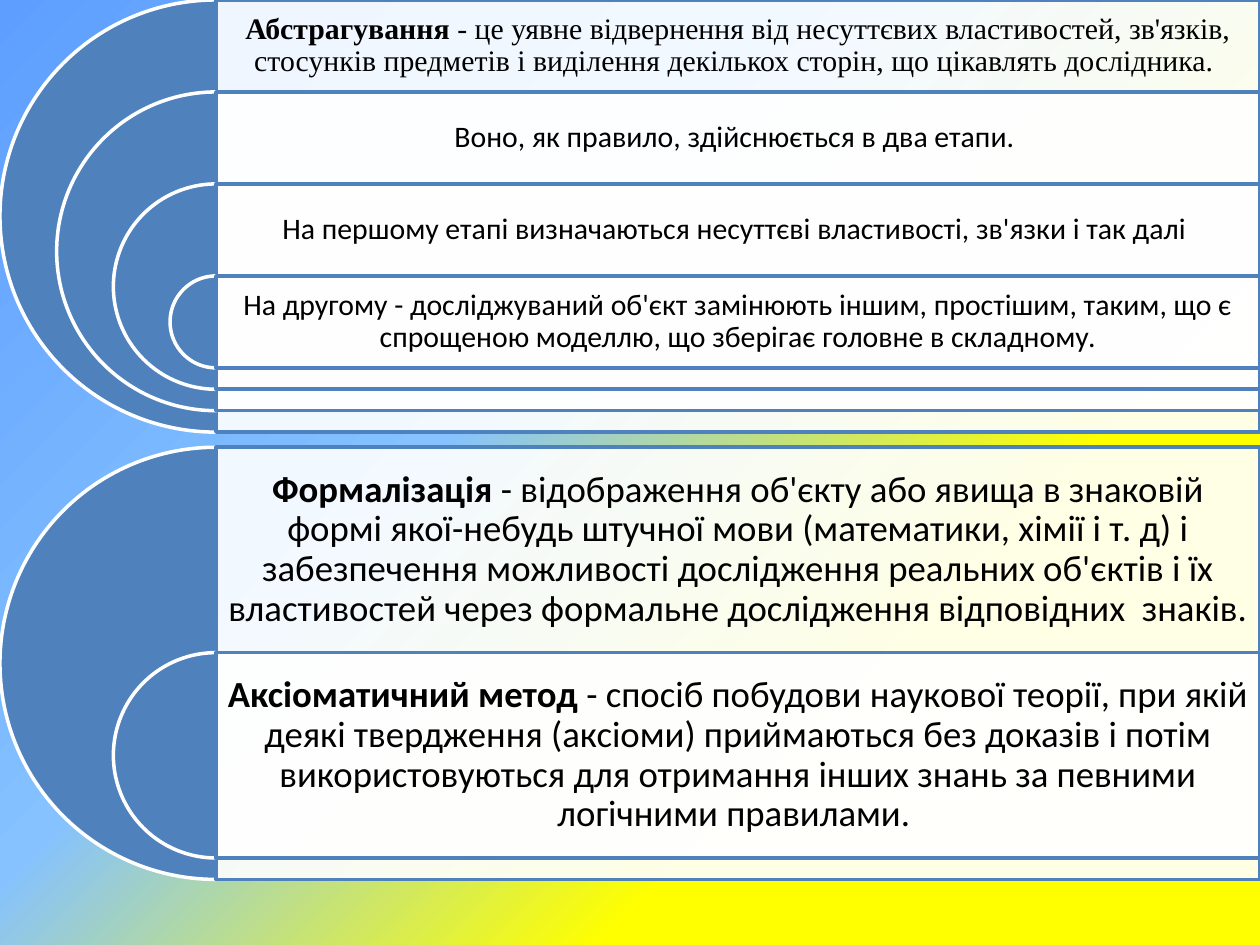
from lxml.etree import SubElement
from pptx import Presentation
from pptx.dml.color import RGBColor
from pptx.enum.shapes import MSO_SHAPE
from pptx.enum.text import MSO_ANCHOR, PP_ALIGN
from pptx.oxml.ns import qn
from pptx.util import Inches, Pt

COLORS = {"blue": "4F81BD", "white": "FFFFFF", "black": "000000",
          "sky": "5E9EFF", "pale": "85C2FF", "yellow": "FFFF00"}
STOPS = [(0, "sky", 43), (40, "pale", 100), (70, "yellow", 59), (100, "yellow", 60)]

prs = Presentation()
prs.slide_width, prs.slide_height = Inches(10), Inches(7.5)
s = prs.slides.add_slide(prs.slide_layouts[6])
U = prs.slide_width / 100
DIAMETER = 34.3
AXIS = DIAMETER / 2

GROUPS = [
    {"top": 0, "inset": 4.5, "size": 17, "margin": 0.7, "items": [
        ("Times New Roman", "Абстрагування",
         " - це уявне відвернення від несуттєвих властивостей, зв'язків, "
         "стосунків предметів і виділення декількох сторін, що цікавлять дослідника. "),
        ("Calibri", "", "Воно, як правило, здійснюється в два етапи. "),
        ("Calibri", "", "На першому етапі визначаються несуттєві властивості, зв'язки і так далі "),
        ("Calibri", "", "На другому - досліджуваний об'єкт замінюють іншим, простішим, таким, "
         "що є спрощеною моделлю, що зберігає головне в складному."),
    ]},
    {"top": 35.5, "inset": 9, "size": 21, "margin": 0.9, "items": [
        ("Calibri", "Формалізація",
         " - відображення об'єкту або явища в знаковій формі якої-небудь штучної мови "
         "(математики, хімії і т. д) і забезпечення можливості дослідження реальних "
         "об'єктів і їх властивостей через формальне дослідження відповідних  знаків."),
        ("Calibri", "Аксіоматичний метод",
         " - спосіб побудови наукової теорії, при якій деякі твердження (аксіоми) "
         "приймаються без доказів і потім використовуються для отримання інших знань "
         "за певними логічними правилами. "),
    ]},
]


def box(x, y, w, h):
    return [round(v * U) for v in (x, y, w, h)]


def add_block(kind, place, fill, line):
    sp = s.shapes.add_shape(kind, *place)
    sp.shadow.inherit = False
    sp.fill.solid()
    sp.fill.fore_color.rgb = RGBColor.from_string(COLORS[fill])
    sp.line.color.rgb = RGBColor.from_string(COLORS[line])
    sp.line.width = Pt(2)
    return sp


bg = s.background.fill
bg.gradient()
bg.gradient_angle = 0
grad = s.background._cSld.find(".//" + qn("a:gradFill"))
stops = grad.find(qn("a:gsLst"))
for old in list(stops):
    stops.remove(old)
for pos, name, alpha in STOPS:
    gs = SubElement(stops, qn("a:gs"), pos=str(pos * 1000))
    clr = SubElement(gs, qn("a:srgbClr"), val=COLORS[name])
    if alpha < 100:
        SubElement(clr, qn("a:alpha"), val=str(alpha * 1000))
lin = grad.find(qn("a:lin"))
lin.set("ang", str(45 * 60000))
lin.set("scaled", "0")

for group in GROUPS:
    row = DIAMETER - 2 * group["inset"] * (len(group["items"]) - 1)
    for i, (font, term, text) in enumerate(group["items"]):
        x = i * group["inset"]
        y = group["top"] + i * row
        d = DIAMETER - 2 * x

        pie = add_block(MSO_SHAPE.PIE, box(x, y, d, d), "blue", "white")
        pie.adjustments[0], pie.adjustments[1] = 54, 162

        panel = add_block(MSO_SHAPE.RECTANGLE, box(AXIS, y, 100 - AXIS, d), "white", "blue")
        clr = panel._element.spPr.find(qn("a:solidFill")).find(qn("a:srgbClr"))
        SubElement(clr, qn("a:alpha"), val="90000")

        tb = s.shapes.add_textbox(*box(AXIS, y, 100 - AXIS, row))
        tf = tb.text_frame
        tf.word_wrap = True
        tf.vertical_anchor = MSO_ANCHOR.MIDDLE
        tf.margin_left = tf.margin_right = round(group["margin"] * U)
        tf.margin_top = tf.margin_bottom = round(group["margin"] * U)
        p = tf.paragraphs[0]
        p.alignment = PP_ALIGN.CENTER
        p.line_spacing = 0.9
        p.space_after = Pt(0.35 * group["size"])
        for part, bold in ((term, True), (text, False)):
            if part:
                r = p.add_run()
                r.text = part
                r.font.name = font
                r.font.size = Pt(group["size"])
                r.font.bold = bold
                r.font.color.rgb = RGBColor.from_string(COLORS["black"])

prs.save("out.pptx")
